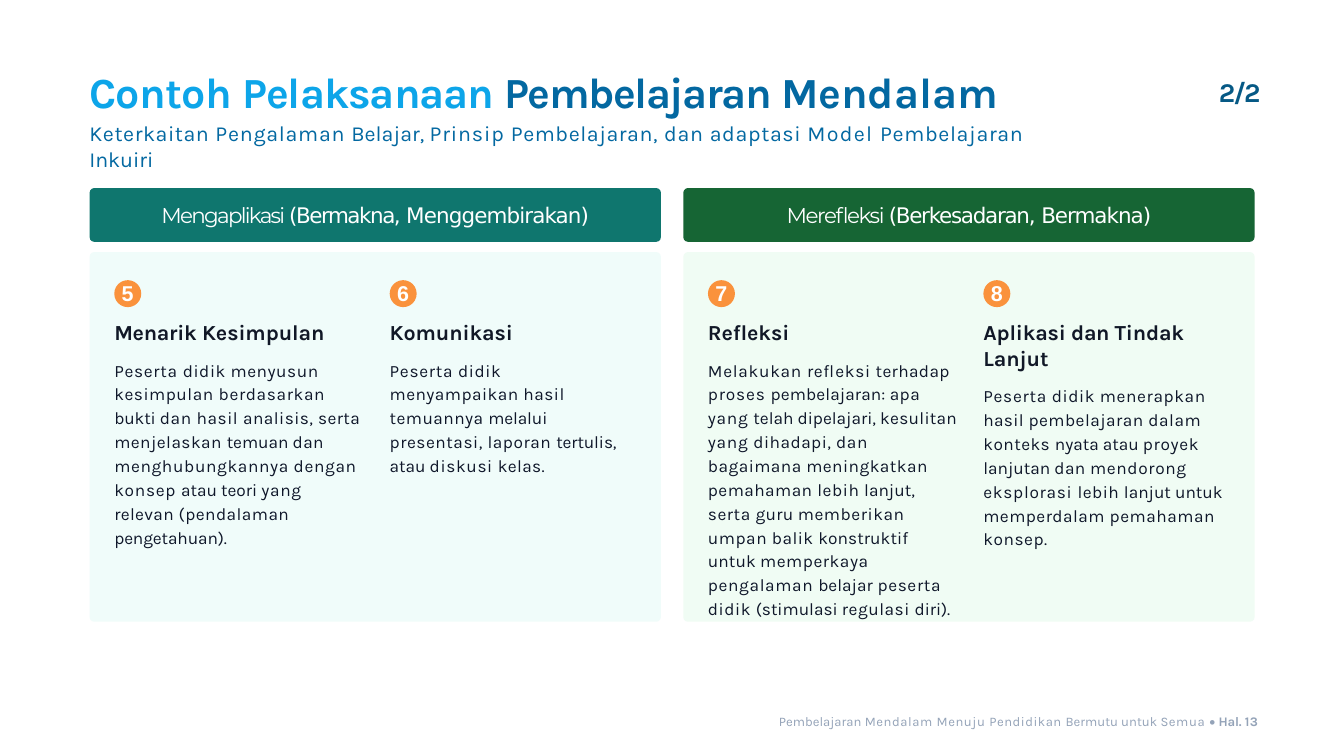
from pptx import Presentation
from pptx.dml.color import RGBColor
from pptx.enum.shapes import MSO_SHAPE as Preset
from pptx.enum.text import MSO_ANCHOR as Anchor, MSO_AUTO_SIZE as AutoSize, PP_ALIGN as Align
from pptx.util import Cm, Pt

CORNER = 0.17
PANEL_WIDTH, PANEL_PITCH = 21.59, 22.44
HEADER_HEIGHT, PANEL_HEIGHT, PANEL_OFFSET = 2.03, 13.97, 2.42
STEP_PITCH = 10.41
STEP_SPACING = 12.4

PHASES = [
    dict(
        name=[("Mengaplikasi ", -1.9)],
        principles=[("(Bermakna, ", -1.6), ("Menggembirakan)", -1)],
        header_color="0F766E", panel_color="F0FCFA",
        steps=[
            dict(number="5", width=9.53, height=9.83,
                 heading=[("Menarik ", -0.3), ("Kesimpulan", -0.1)],
                 body=[("Peserta ", 0.8), ("didik menyusun kesimpulan ", 0.6),
                       ("berdasarkan ", 0.7), ("bukti ", -0.1), ("dan ", 0.7),
                       ("hasil ", 0.6), ("analisis, ", 0.5), ("serta ", 0.4),
                       ("menjelaskan ", 0.5), ("temuan ", 0), ("dan ", 0.4),
                       ("menghubungkannya dengan ", 0.7), ("konsep ", 0.8),
                       ("atau teori ", 0), ("yang ", 0.8), ("relevan ", 0.4),
                       ("(pendalaman ", 0.5), ("pengetahuan).", -0.1)]),
            dict(number="6", width=8.92, height=7.11,
                 heading=[("Komunikasi", -0.1)],
                 body=[("Peserta ", 0.8), ("didik ", 0.6), ("menyampaikan ", 0.5),
                       ("hasil ", 0.6), ("temuannya ", 0.5), ("melalui ", -0.1),
                       ("presentasi, laporan ", 0.6), ("tertulis, ", -0.1),
                       ("atau ", 0), ("diskusi ", 0.7), ("kelas.", 0.4)]),
        ]),
    dict(
        name=[("Mereﬂeksi ", -1.6)],
        principles=[("(Berkesadaran, ", -1.4), ("Bermakna)", -1.1)],
        header_color="166534", panel_color="F0FCF4",
        steps=[
            dict(number="7", width=9.47, height=12.52,
                 heading=[("Refleksi", -0.1)],
                 body=[("Melakukan ", 0.8), ("refleksi ", 0.7), ("terhadap ", 0.4),
                       ("proses ", 0.9), ("pembelajaran: ", 0.1), ("apa ", 0.5),
                       ("yang ", 0.8), ("telah dipelajari, ", 0), ("kesulitan ", 0.3),
                       ("yang ", 0.8), ("dihadapi, ", 0.5), ("dan ", 0.7),
                       ("bagaimana meningkatkan pemahaman ", 0.5), ("lebih ", 0.6),
                       ("lanjut, ", 0), ("serta ", 0.6), ("guru ", 0.3),
                       ("memberikan umpan ", 0.6), ("balik ", 0.5),
                       ("konstruktif untuk ", 0.1), ("memperkaya ", 0.6),
                       ("pengalaman ", 0.7), ("belajar", 0), (" peserta ", 0.7),
                       ("didik ", 0.6), ("(stimulasi ", 0), ("regulasi ", 0.6),
                       ("diri).", -0.1)]),
            dict(number="8", width=9.68, height=9.88,
                 heading=[("Aplikasi ", -0.2), ("dan ", -0.4), ("Tindak ", -0.2),
                          ("Lanjut", -0.1)],
                 body=[("Peserta ", 0.8), ("didik ", 0.6), ("menerapkan ", 0.7),
                       ("hasil ", 0.4), ("pembelajaran ", 0.5), ("dalam ", 0.6),
                       ("konteks ", 0.5), ("nyata atau ", 0), ("proyek ", 0.7),
                       ("lanjutan ", 0), ("dan ", 0.4), ("mendorong ", 0.7),
                       ("eksplorasi ", 0.8), ("lebih ", 0.5), ("lanjut untuk ", 0),
                       ("memperdalam ", 0.5), ("pemahaman konsep.", 0.6)]),
        ]),
]


def rgb(hex_color):
    """Turn a hex string into a colour."""
    return RGBColor.from_string(hex_color)


def write(paragraph, pieces, size, color, font="Karla", bold=False):
    """Append (text, letter spacing in points) pieces in one format."""
    for text, spacing in pieces:
        run = paragraph.add_run()
        run.text = text
        run.font.size, run.font.name, run.font.bold = Pt(size), font, bold
        run.font.color.rgb = rgb(color)
        run.font._element.set("spc", str(round(spacing * 100)))


def prepare(frame, top_inset=0.0, anchor=Anchor.TOP, align=Align.LEFT):
    """Set the insets, wrapping and alignment of a frame; return its first paragraph."""
    frame.word_wrap, frame.auto_size = True, AutoSize.NONE
    frame.margin_left = frame.margin_right = frame.margin_bottom = 0
    frame.margin_top = Cm(top_inset)
    frame.vertical_anchor = anchor
    frame.paragraphs[0].alignment = align
    return frame.paragraphs[0]


def add_paragraph(frame, space_before):
    """Add a left-aligned paragraph below the previous one."""
    paragraph = frame.add_paragraph()
    paragraph.alignment, paragraph.space_before = Align.LEFT, Pt(space_before)
    return paragraph


def add_box(slide, left, top, width, height):
    """Add a text box measured in centimetres and return its frame."""
    return slide.shapes.add_textbox(Cm(left), Cm(top), Cm(width), Cm(height)).text_frame


def add_filled(slide, preset, left, top, width, height, color):
    """Add a flat filled shape without outline."""
    shape = slide.shapes.add_shape(preset, Cm(left), Cm(top), Cm(width), Cm(height))
    shape.shadow.inherit = False
    shape.fill.solid()
    shape.fill.fore_color.rgb = rgb(color)
    shape.line.fill.background()
    if preset == Preset.ROUNDED_RECTANGLE:
        shape.adjustments[0] = CORNER / min(width, height)
    return shape


def add_title(slide, left, top, width, height):
    """Fill the title placeholder with the heading and its subtitle."""
    title = slide.shapes.title
    title.left, title.top, title.width, title.height = map(Cm, (left, top, width, height))
    heading = prepare(title.text_frame, 0.28)
    write(heading, [("Contoh ", -0.7), ("Pelaksanaan ", -1.1)], 46, "0DA5E9", bold=True)
    write(heading, [("Pembelajaran ", -1.6), ("Mendalam", -0.1)], 46, "0368A1", bold=True)
    subtitle = add_paragraph(title.text_frame, 3.3)
    write(subtitle, [("Keterkaitan ", 0.6), ("Pengalaman ", 0.8), ("Belajar, ", 0),
                     ("Prinsip ", 0.9), ("Pembelajaran, ", 0.6), ("dan ", 0.8),
                     ("adaptasi ", 0.7), ("Model ", 1.4), ("Pembelajaran ", 0.7),
                     ("Inkuiri", -0.1)], 23, "0368A1")


def add_step(slide, left, top, number, width, height, heading, body):
    """Add a numbered step: badge, heading and description."""
    add_filled(slide, Preset.OVAL, left, top + 1.06, 1.02, 1.02, "FA923C")
    frame = add_box(slide, left, top + 0.48, width, height)
    badge = prepare(frame, 0.56)
    badge._p.get_or_add_pPr().set("marL", str(Cm(0.28)))
    write(badge, [(number, -0.5)], 23, "FFFFFF", "Arial", bold=True)
    write(add_paragraph(frame, 15.1), heading, 23, "111827", bold=True)
    description = add_paragraph(frame, STEP_SPACING)
    description.line_spacing = 1.15
    write(description, body, 18.5, "0F172A")


def add_phase(slide, left, top, name, principles, header_color, panel_color, steps):
    """Add a phase: header bar above a panel of steps."""
    header = add_filled(slide, Preset.ROUNDED_RECTANGLE, left, top,
                        PANEL_WIDTH, HEADER_HEIGHT, header_color)
    label = prepare(header.text_frame, anchor=Anchor.MIDDLE, align=Align.CENTER)
    write(label, name, 23, "FFFFFF", "Montserrat")
    write(label, principles, 23, "FFFFFF", "DejaVu Sans")
    panel_top = top + PANEL_OFFSET
    add_filled(slide, Preset.ROUNDED_RECTANGLE, left, panel_top,
               PANEL_WIDTH, PANEL_HEIGHT, panel_color)
    for column, step in enumerate(steps):
        add_step(slide, left + 0.93 + column * STEP_PITCH, panel_top, **step)


def add_part_number(slide, left, top, width, height):
    """Add the part counter at the top right."""
    paragraph = prepare(add_box(slide, left, top, width, height), 0.03)
    write(paragraph, [("2/2", -2.1)], 29, "065985", bold=True)


def add_footer(slide, left, top, width, height):
    """Add the series name and the page number."""
    paragraph = prepare(add_box(slide, left, top, width, height), 0.03)
    write(paragraph, [("Pembelajaran ", 0), ("Mendalam Menuju ", 0.6), ("Pendidikan ", 0.5),
                      ("Bermutu untuk ", 0), ("Semua ", 0.6)], 14, "94A3B8")
    write(paragraph, [("• ", 0)], 14, "94A3B8", "Calibri")
    write(paragraph, [("Hal. ", -0.2), ("13", 0.5)], 14, "94A3B8", bold=True)


def main():
    """Build the slide and save it."""
    deck = Presentation()
    deck.slide_width, deck.slide_height = Cm(50.8), Cm(28.575)
    slide = deck.slides.add_slide(deck.slide_layouts[5])
    add_title(slide, 3.38, 2.21, 36.6, 3.35)
    add_part_number(slide, 46.07, 2.84, 1.73, 1.3)
    for index, phase in enumerate(PHASES):
        add_phase(slide, 3.39 + index * PANEL_PITCH, 7.11, **phase)
    add_footer(slide, 29.44, 26.95, 18.21, 0.69)
    deck.save("out.pptx")


if __name__ == "__main__":
    main()
